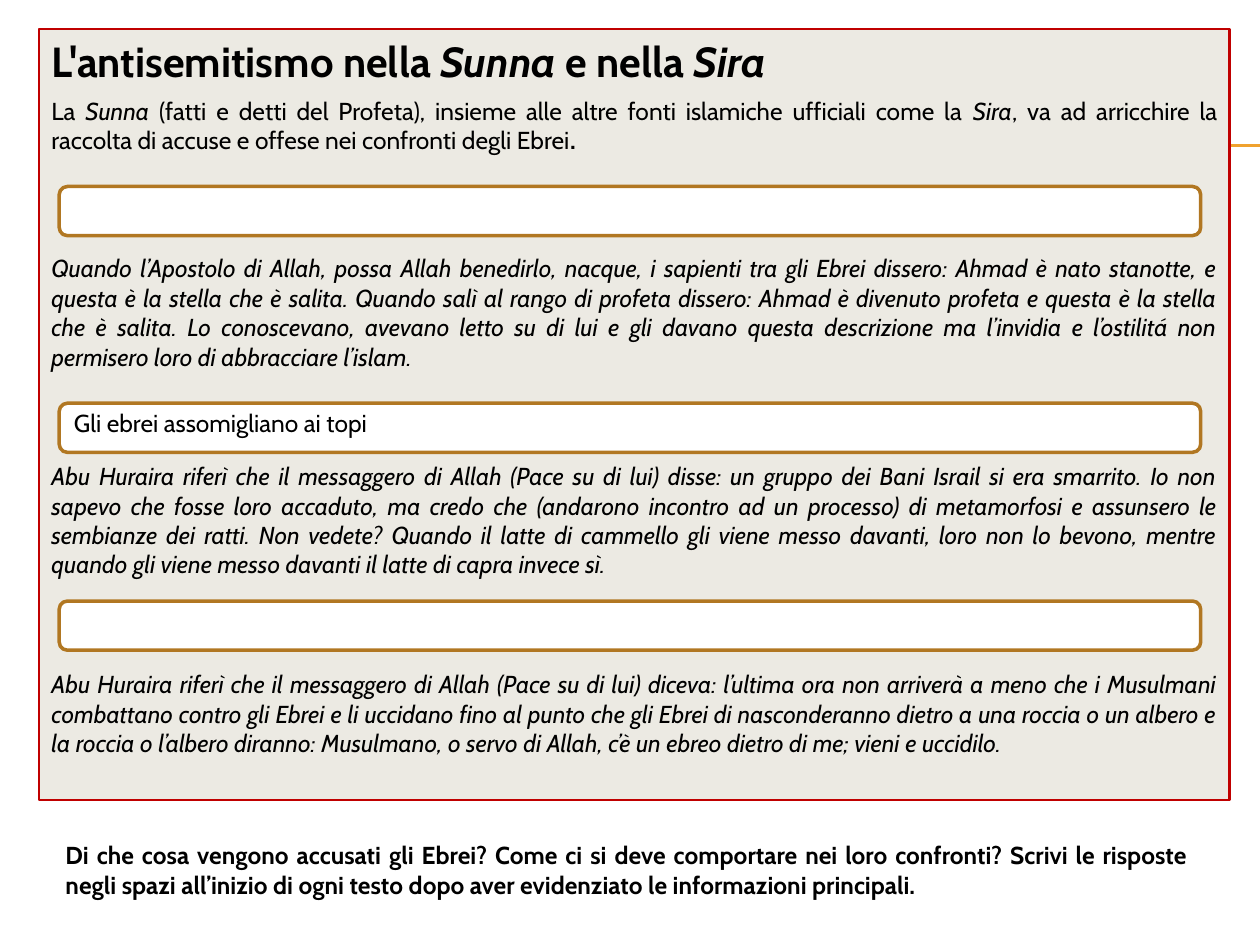
from lxml import etree
from pptx import Presentation
from pptx import util as u
from pptx.dml.color import RGBColor
from pptx.enum import shapes, text
from pptx.oxml.ns import qn

INTRO = [
    ("La ", ""), ("Sunna", "i"),
    (" (fatti e detti del Profeta), insieme alle altre fonti islamiche ufficiali come la ", ""),
    ("Sira", "i"),
    (", va ad arricchire la raccolta di accuse e offese nei confronti degli Ebrei", ""),
    (".", "b"),
]
STAR = (
    "Quando l’Apostolo di Allah, possa Allah benedirlo, nacque, i sapienti tra gli Ebrei "
    "dissero: Ahmad è nato stanotte, e questa è la stella che è salita. Quando salì al "
    "rango di profeta dissero: Ahmad è divenuto profeta e questa è la stella che è salita. "
    "Lo conoscevano, avevano letto su di lui e gli davano questa descrizione ma l’invidia e "
    "l’ostilitá non permisero loro di abbracciare l’islam."
)
RATS = (
    "Abu Huraira riferì che il messaggero di Allah (Pace su di lui) disse: un gruppo dei Bani "
    "Israil si era smarrito. Io non sapevo che fosse loro accaduto, ma credo che (andarono "
    "incontro ad un processo) di metamorfosi e assunsero le sembianze dei ratti. Non vedete? "
    "Quando il latte di cammello gli viene messo davanti, loro non lo bevono, mentre quando "
    "gli viene messo davanti il latte di capra invece sì."
)
LAST_HOUR = (
    "Abu Huraira riferì che il messaggero di Allah (Pace su di lui) diceva: l’ultima ora non "
    "arriverà a meno che i Musulmani combattano contro gli Ebrei e li uccidano fino al punto "
    "che gli Ebrei di nasconderanno dietro a una roccia o un albero e la roccia o l’albero "
    "diranno: Musulmano, o servo di Allah, c’è un ebreo dietro di me; vieni e uccidilo."
)
QUESTION = (
    "Di che cosa vengono accusati gli Ebrei? Come ci si deve comportare nei loro confronti? "
    "Scrivi le risposte negli spazi all’inizio di ogni testo dopo aver evidenziato le "
    "informazioni principali."
)


def color(value):
    return RGBColor.from_string(value)


class Sheet:
    font = "Cabin"
    ink = "000000"
    body_size = 14

    def __init__(self, page):
        self.page = page

    def place(self, shape, left, top, width, height):
        shape.left, shape.top = u.Inches(left), u.Inches(top)
        shape.width, shape.height = u.Inches(width), u.Inches(height)

    def fill_text(self, shape, paragraphs, top_inset=0.05, side_inset=0.1):
        """Each paragraph is (spans, style, space before); spans are (text, style)."""
        frame = shape.text_frame
        frame.word_wrap = True
        frame.auto_size = text.MSO_AUTO_SIZE.NONE
        frame.vertical_anchor = text.MSO_ANCHOR.TOP
        frame.margin_top = u.Inches(top_inset)
        frame.margin_left = frame.margin_right = u.Inches(side_inset)
        for index, (spans, style, gap) in enumerate(paragraphs):
            para = frame.add_paragraph() if index else frame.paragraphs[0]
            para.alignment = text.PP_ALIGN.JUSTIFY
            para.space_before = u.Pt(gap)
            para.font.name = self.font
            para.font.size = u.Pt(self.body_size)
            para.font.color.rgb = color(self.ink)
            para.font.bold = "b" in style
            para.font.italic = "i" in style
            for words, span_style in spans:
                span = para.add_run()
                span.text = words
                if "b" in span_style:
                    span.font.bold = True
                if "i" in span_style:
                    span.font.italic = True

    def rule(self, left, right, y):
        line = self.page.shapes.add_connector(
            shapes.MSO_CONNECTOR.STRAIGHT,
            u.Inches(left), u.Inches(y), u.Inches(right), u.Inches(y))
        line.line.color.rgb = color("F0A22E")
        line.line.width = u.Pt(0.75)
        etree.SubElement(line.element.spPr, qn("a:effectLst"))

    def box(self, kind, place, fill, outline, weight):
        box = self.page.shapes.add_shape(kind, *map(u.Inches, place))
        box.shadow.inherit = False
        box.fill.solid()
        box.fill.fore_color.rgb = color(fill)
        box.line.color.rgb = color(outline)
        box.line.width = u.Pt(weight)
        return box

    def title(self, spans, place):
        title = self.page.shapes.title
        self.place(title, *place)
        self.fill_text(title, [(spans, "b", 0)])
        para = title.text_frame.paragraphs[0]
        para.alignment = text.PP_ALIGN.LEFT
        para.font.size = u.Pt(24)
        # Bring the title in front of the panel
        self.page.shapes[-1].element.addnext(title.element)

    def answer(self, top):
        return self.box(shapes.MSO_SHAPE.ROUNDED_RECTANGLE, (0.47, top, 9.06, 0.39),
                        "FFFFFF", "B17722", 2)

    def note(self, words, place):
        note = self.page.shapes.add_textbox(*map(u.Inches, place))
        self.fill_text(note, [([(words, "")], "b", 0)], top_inset=0.19, side_inset=0.13)


def main():
    deck = Presentation()
    deck.slide_width, deck.slide_height = u.Inches(10), u.Inches(7.5)
    sheet = Sheet(deck.slides.add_slide(deck.slide_layouts[5]))

    # Double rule behind the panel
    for y in (1.15, 1.16):
        sheet.rule(0.56, 10, y)

    # Panel with the introduction and the three sources
    panel = sheet.box(shapes.MSO_SHAPE.RECTANGLE, (0.31, 0.23, 9.45, 6.12),
                      "ECEAE3", "C00000", 1.5)
    sources = [(STAR, 56.4), (RATS, 51.6), (LAST_HOUR, 51.6)]
    quotes = [([(words, "")], "i", gap) for words, gap in sources]
    sheet.fill_text(panel, [(INTRO, "", 0)] + quotes, top_inset=0.53)
    sheet.title([("L'antisemitismo nella ", ""), ("Sunna ", "i"), ("e nella ", ""), ("Sira", "i")],
                (0.31, 0.23, 9.45, 0.53))

    # Answer spaces, the second one already filled in
    answers = [sheet.answer(top) for top in (1.48, 3.2, 4.77)]
    sheet.fill_text(answers[1], [([("Gli ebrei assomigliano ai topi", "")], "", 0)],
                    top_inset=0.02)

    # Task for the class
    sheet.note(QUESTION, (0.39, 6.48, 9.17, 0.7))

    deck.save("out.pptx")


if __name__ == "__main__":
    main()
